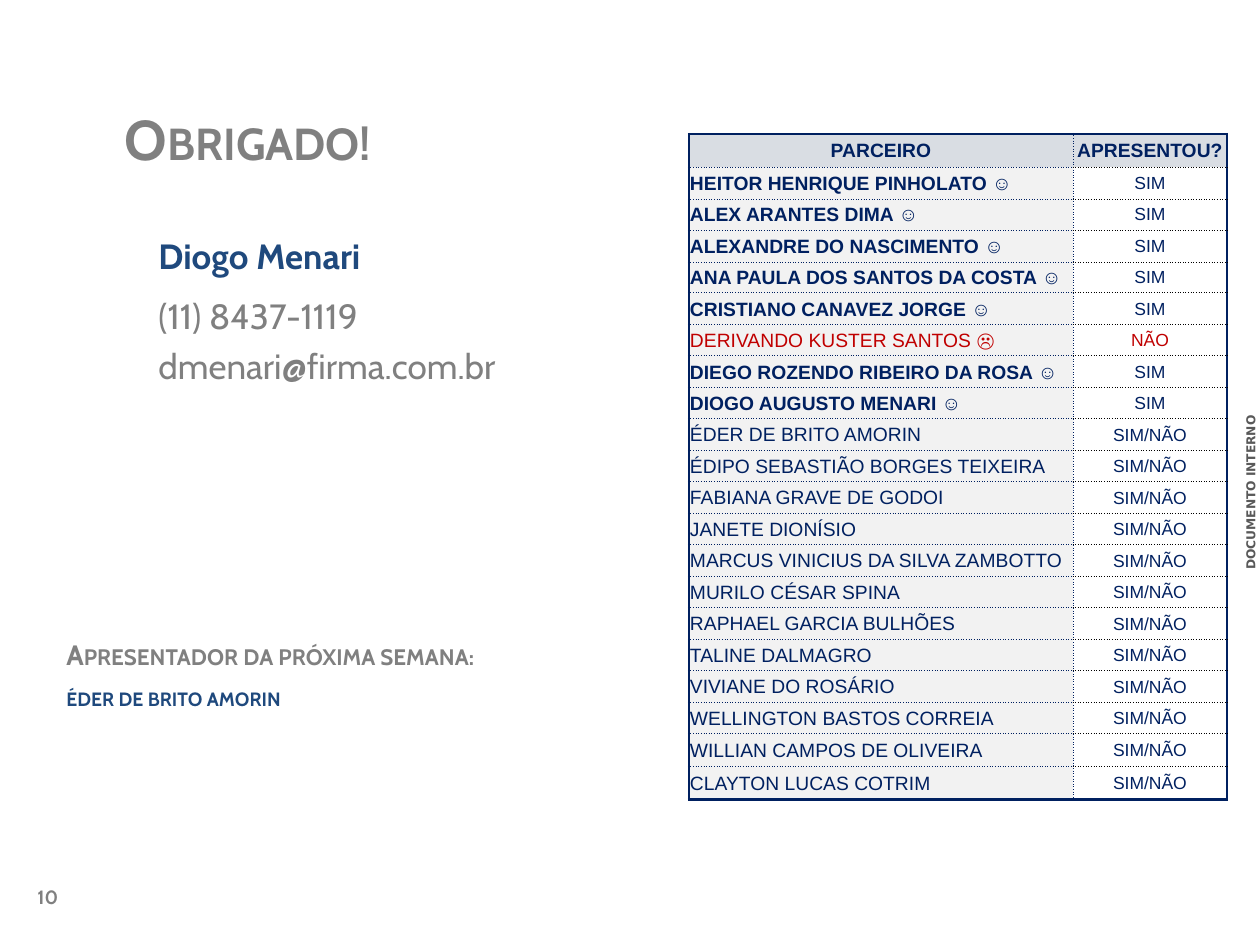
from dataclasses import dataclass

from lxml.etree import SubElement
from pptx import Presentation
from pptx.dml.color import RGBColor
from pptx.enum.text import MSO_ANCHOR as Anchor, MSO_AUTO_SIZE as AutoSize, PP_ALIGN as Align
from pptx.oxml.ns import qn
from pptx.util import Emu, Pt

NAVY, BLUE, GRAY, RED = "002060", "1F497D", "808080", "C00000"
BLACK, WHITE, HEADER_FILL, NAME_FILL = "000000", "FFFFFF", "D9DDE3", "F2F2F2"


@dataclass(frozen=True)
class Style:
    size: int
    color: str
    bold: bool = False
    font: str = "Cabin"
    small_caps: bool = False


@dataclass(frozen=True)
class Label:
    text: str
    left: int
    top: int
    width: int
    height: int
    style: Style
    align: Align = Align.LEFT
    rotation: int = 0


@dataclass(frozen=True)
class Border:
    color: str = NAVY
    width: float = 0.5
    dotted: bool = True


@dataclass(frozen=True)
class Partner:
    name: str
    presented: str = "SIM/NÃO"
    color: str = NAVY
    bold: bool = False


def px(length: int) -> Emu:
    return Emu(round(length * 914400 / 126))


def rgb(color: str) -> RGBColor:
    return RGBColor.from_string(color)


def add_span(para, text: str, style: Style) -> None:
    span = para.add_run()
    span.text = text
    span.font.name = style.font
    span.font.size = Pt(style.size)
    span.font.bold = style.bold
    span.font.color.rgb = rgb(style.color)
    if style.small_caps:
        span.font._element.set("cap", "small")


def fill_label(box, label: Label) -> None:
    box.left, box.top = px(label.left), px(label.top)
    box.width, box.height = px(label.width), px(label.height)
    box.rotation = label.rotation
    frame = box.text_frame
    frame.word_wrap = True
    frame.auto_size = AutoSize.NONE
    frame.vertical_anchor = Anchor.TOP
    para = frame.paragraphs[0]
    para.alignment = label.align
    add_span(para, label.text, label.style)


def add_label(page, label: Label) -> None:
    fill_label(page.shapes.add_textbox(0, 0, 0, 0), label)


def set_borders(cell, borders: dict[str, Border]) -> None:
    properties = cell._tc.get_or_add_tcPr()
    for side in "LRTB":
        border = borders[side]
        line = SubElement(properties, qn(f"a:ln{side}"), w=str(Pt(border.width)))
        solid = SubElement(line, qn("a:solidFill"))
        SubElement(solid, qn("a:srgbClr"), val=border.color)
        SubElement(line, qn("a:prstDash"), val="sysDot" if border.dotted else "solid")


def fill_cell(cell, text: str, style: Style, align: Align, fill: str,
              borders: dict[str, Border]) -> None:
    cell.margin_left = cell.margin_top = cell.margin_right = px(1)
    cell.margin_bottom = 0
    cell.vertical_anchor = Anchor.MIDDLE
    para = cell.text_frame.paragraphs[0]
    para.alignment = align
    add_span(para, text, style)
    set_borders(cell, borders)
    cell.fill.solid()
    cell.fill.fore_color.rgb = rgb(fill)


def add_partner_table(page, partners: list[Partner]) -> None:
    widths = [384, 154]
    heights = [33] + [32, 31] * 9 + [33, 33]
    table = page.shapes.add_table(
        len(heights), len(widths), px(689), px(134), px(sum(widths)), px(sum(heights))
    ).table
    table.first_row = table.horz_banding = False
    for column, width in zip(table.columns, widths):
        column.width = px(width)
    for row, height in zip(table.rows, heights):
        row.height = px(height)

    edge, dots, black_dots = Border(width=1.5, dotted=False), Border(), Border(BLACK)
    last = len(partners)

    def row_borders(row: int, column: int) -> dict[str, Border]:
        inner = black_dots if column else dots
        return {
            "L": dots if column else edge,
            "R": edge if column else dots,
            "T": inner if row else edge,
            "B": inner if row < last else edge,
        }

    header = Style(11, NAVY, True, "Arial")
    for column, text in enumerate(["PARCEIRO", "APRESENTOU?"]):
        fill_cell(table.cell(0, column), text, header, Align.CENTER, HEADER_FILL,
                  row_borders(0, column))
    for row, partner in enumerate(partners, start=1):
        fill_cell(table.cell(row, 0), partner.name,
                  Style(11, partner.color, partner.bold, "Arial"),
                  Align.LEFT, NAME_FILL, row_borders(row, 0))
        fill_cell(table.cell(row, 1), partner.presented,
                  Style(10, partner.color, False, "Arial"),
                  Align.CENTER, WHITE, row_borders(row, 1))


TITLE = Label("Obrigado!", 84, 98, 328, 81, Style(32, GRAY, True, small_caps=True), Align.CENTER)
LABELS = [
    Label("DOCUMENTO INTERNO", 1147, 464, 208, 28,
          Style(7, "595959", True, "DejaVu Sans"), rotation=270),
    Label("10", 25, 879, 69, 37, Style(11, GRAY, True)),
    Label("Apresentador da próxima semana:", 54, 631, 1071, 47,
          Style(16, GRAY, True, small_caps=True)),
    Label("Diogo Menari", 146, 228, 984, 59, Style(20, BLUE, True)),
    Label("(11) 8437-1119", 146, 288, 987, 49, Style(20, GRAY)),
    Label("dmenari@firma.com.br", 146, 338, 987, 59, Style(20, GRAY)),
    Label("ÉDER DE BRITO AMORIN", 54, 681, 984, 59, Style(11, BLUE, True)),
]


def done(name: str) -> Partner:
    return Partner(f"{name} ☺", "SIM", bold=True)


PARTNERS = [
    done("HEITOR HENRIQUE PINHOLATO"),
    done("ALEX ARANTES DIMA"),
    done("ALEXANDRE DO NASCIMENTO"),
    done("ANA PAULA DOS SANTOS DA COSTA"),
    done("CRISTIANO CANAVEZ JORGE"),
    Partner("DERIVANDO KUSTER SANTOS ☹", "NÃO", RED),
    done("DIEGO ROZENDO RIBEIRO DA ROSA"),
    done("DIOGO AUGUSTO MENARI"),
    Partner("ÉDER DE BRITO AMORIN"),
    Partner("ÉDIPO SEBASTIÃO BORGES TEIXEIRA"),
    Partner("FABIANA GRAVE DE GODOI"),
    Partner("JANETE DIONÍSIO"),
    Partner("MARCUS VINICIUS DA SILVA ZAMBOTTO"),
    Partner("MURILO CÉSAR SPINA"),
    Partner("RAPHAEL GARCIA BULHÕES"),
    Partner("TALINE DALMAGRO"),
    Partner("VIVIANE DO ROSÁRIO"),
    Partner("WELLINGTON BASTOS CORREIA"),
    Partner("WILLIAN CAMPOS DE OLIVEIRA"),
    Partner("CLAYTON LUCAS COTRIM"),
]


def main() -> None:
    deck = Presentation()
    deck.slide_width, deck.slide_height = px(1260), px(945)
    page = deck.slides.add_slide(deck.slide_layouts.get_by_name("Title Only"))
    fill_label(page.shapes.title, TITLE)
    for label in LABELS:
        add_label(page, label)
    add_partner_table(page, PARTNERS)
    deck.save("out.pptx")


if __name__ == "__main__":
    main()
